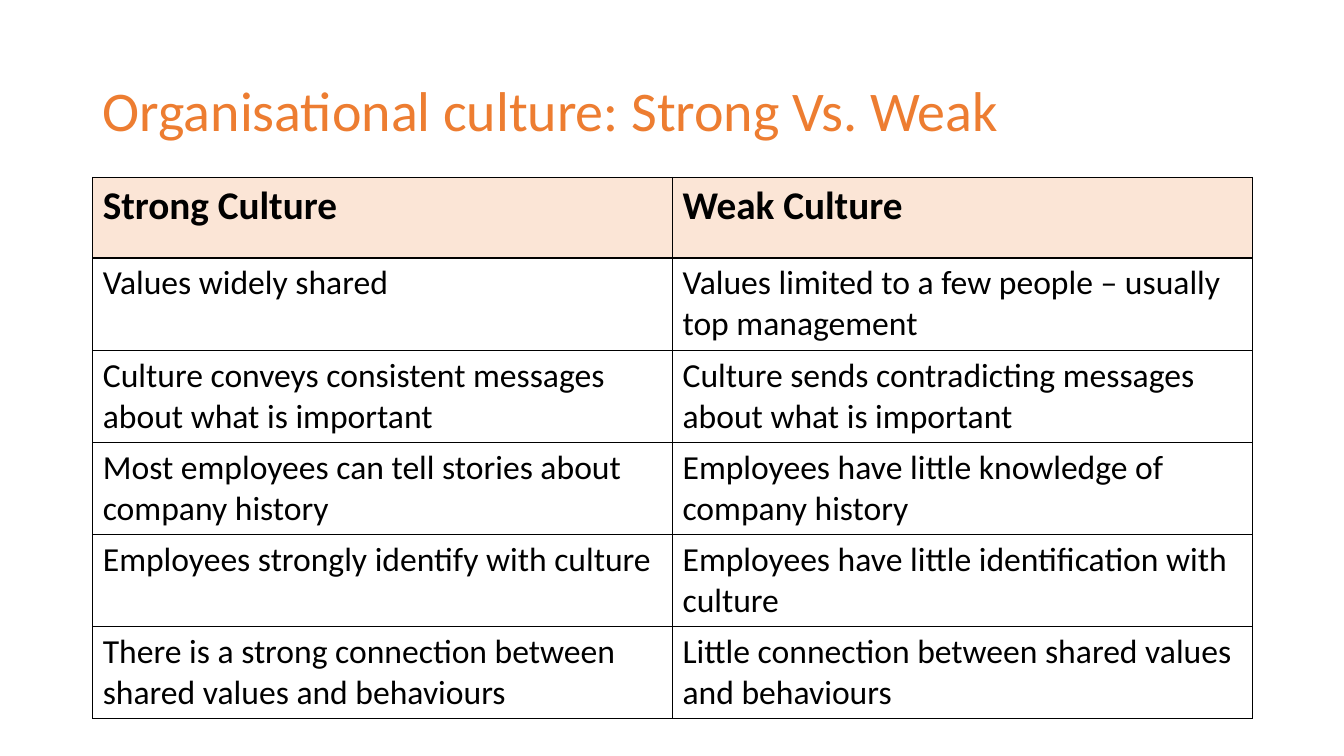
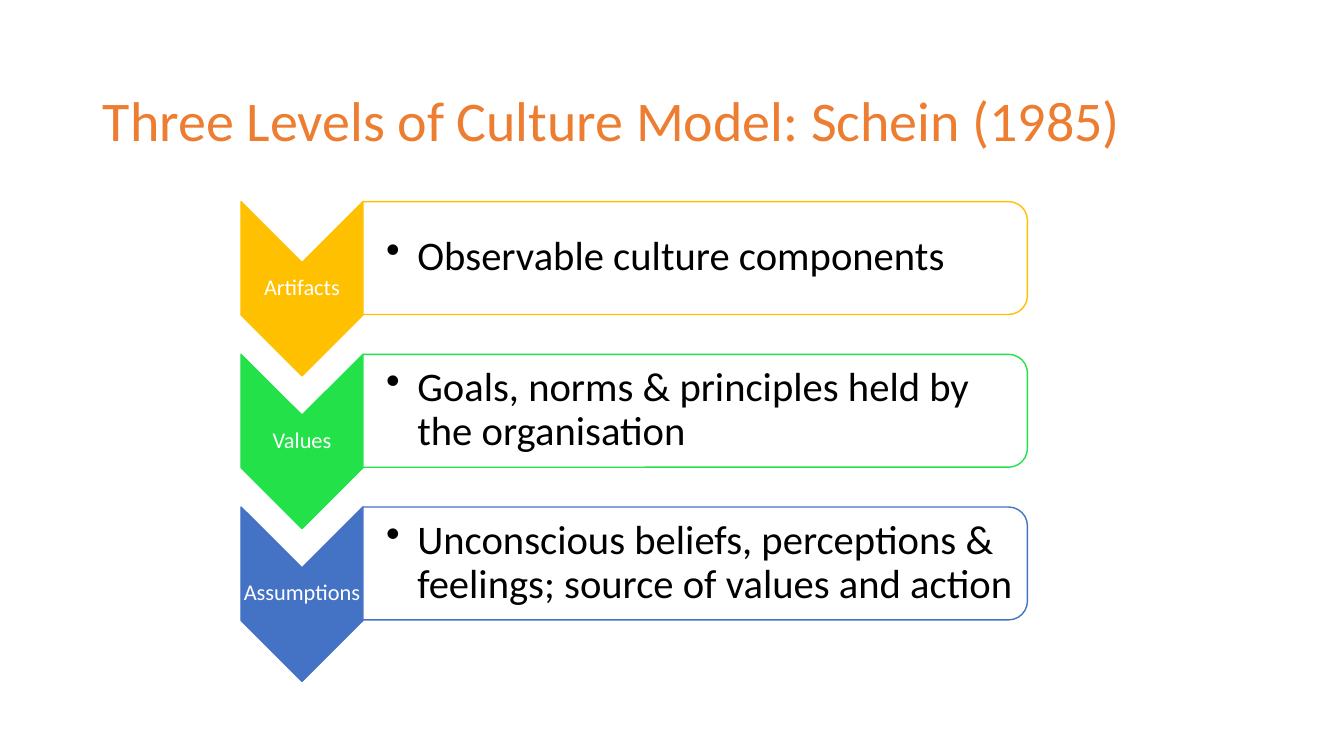
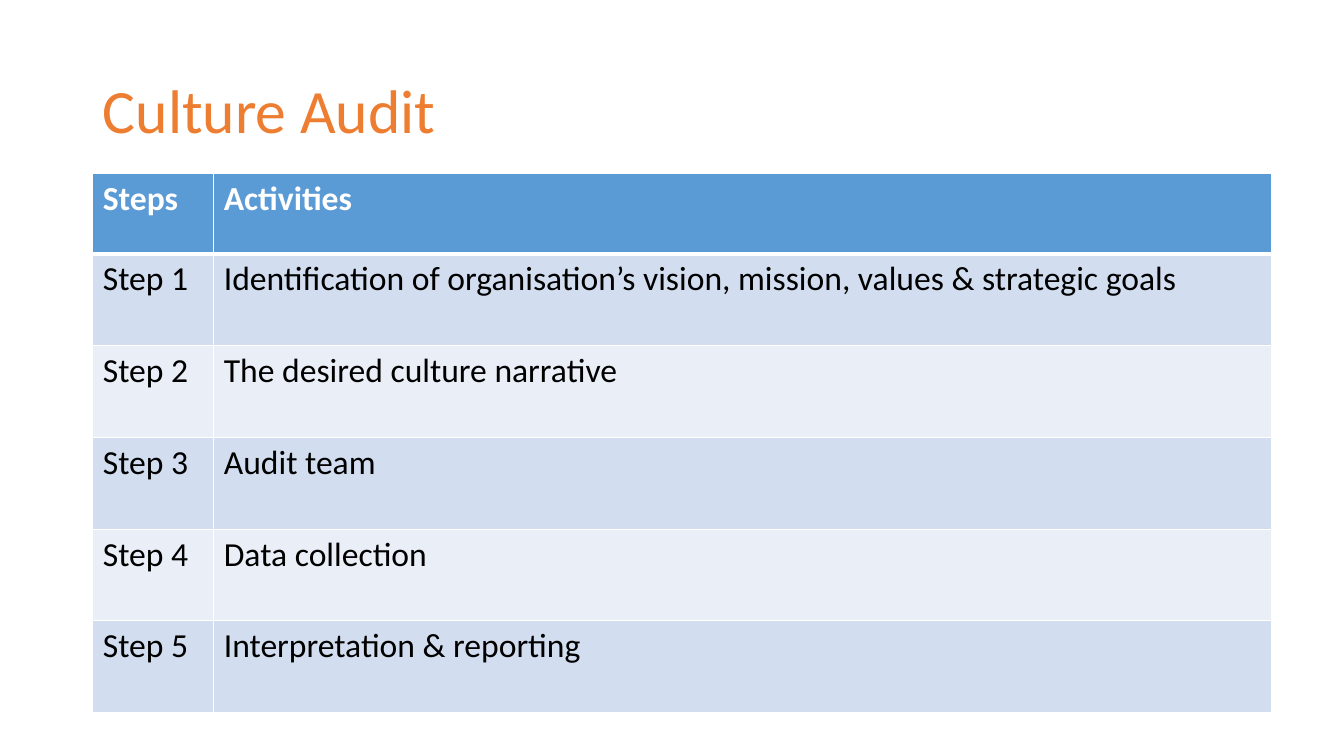
from lxml.etree import SubElement
from pptx import Presentation
from pptx.dml.color import RGBColor
from pptx.enum.shapes import MSO_SHAPE as Shape
from pptx.enum.text import MSO_ANCHOR as Anchor, MSO_AUTO_SIZE as AutoSize, PP_ALIGN as Align
from pptx.oxml.ns import qn
from pptx.util import Inches, Pt

FONT = "Calibri"
ORANGE, PEACH = "ED7D31", "FBE5D6"
BLUE, BAND_DARK, BAND_LIGHT = "5B9BD5", "D2DEEF", "EAEFF7"
BLACK, WHITE = "000000", "FFFFFF"
MARGIN = 0.92
HEADER_HEIGHT, ROW_HEIGHT = 0.8, 0.91

CULTURES = [
    ("Strong Culture", "Weak Culture"),
    ("Values widely shared", "Values limited to a few people – usually top management"),
    ("Culture conveys consistent messages about what is important",
     "Culture sends contradicting messages about what is important"),
    ("Most employees can tell stories about company history",
     "Employees have little knowledge of company history"),
    ("Employees strongly identify with culture",
     "Employees have little identification with culture"),
    ("There is a strong connection between shared values and behaviours",
     "Little connection between shared values and behaviours"),
]
LEVELS = [
    ("Artifacts", "Observable culture components", "FFC000"),
    ("Values", "Goals, norms & principles held by the organisation", "23E148"),
    ("Assumptions", "Unconscious beliefs, perceptions & feelings; source of values and action",
     "4472C4"),
]
ACTIVITIES = [
    "Identification of organisation’s vision, mission, values & strategic goals",
    "The desired culture narrative",
    "Audit team",
    "Data collection",
    "Interpretation & reporting",
]


def color(hex_string):
    return RGBColor.from_string(hex_string)


def style(paragraph, size, text_color, bold=False, align=Align.LEFT):
    font = paragraph.font
    font.name, font.size, font.bold = FONT, Pt(size), bold
    font.color.rgb = color(text_color)
    paragraph.alignment = align


def add_titled_slide(presentation, text, top=0.4, size=40):
    slide = presentation.slides.add_slide(presentation.slide_layouts[5])
    title = slide.shapes.title
    title.left, title.top = Inches(MARGIN), Inches(top)
    title.width, title.height = Inches(11.5), Inches(1.45)
    frame = title.text_frame
    frame.text = text
    frame.auto_size = AutoSize.NONE
    frame.vertical_anchor = Anchor.MIDDLE
    frame.paragraphs[0].line_spacing = 0.9
    style(frame.paragraphs[0], size, ORANGE)
    return slide


def set_borders(cell, line_color, top=1, bottom=1):
    properties = cell._tc.get_or_add_tcPr()
    for side, width in (("L", 1), ("R", 1), ("T", top), ("B", bottom)):
        line = SubElement(properties, qn(f"a:ln{side}"), w=str(Pt(width)))
        fill = SubElement(line, qn("a:solidFill"))
        SubElement(fill, qn("a:srgbClr"), val=line_color)


def add_grid(slide, top, widths, rows, header_fill, header_color, header_size,
             line_color, header_line=1, bands=()):
    """Add a table with a header row and, if given, alternating body fills."""
    height = HEADER_HEIGHT + ROW_HEIGHT * (len(rows) - 1)
    table = slide.shapes.add_table(len(rows), len(widths), Inches(MARGIN), Inches(top),
                                   Inches(sum(widths)), Inches(height)).table
    table.horz_banding = False
    for column, width in zip(table.columns, widths):
        column.width = Inches(width)
    for row_index, texts in enumerate(rows):
        is_header = row_index == 0
        table.rows[row_index].height = Inches(HEADER_HEIGHT if is_header else ROW_HEIGHT)
        band = bands[(row_index - 1) % len(bands)] if bands else None
        fill = header_fill if is_header else band
        for column_index, text in enumerate(texts):
            cell = table.cell(row_index, column_index)
            cell.text = text
            style(cell.text_frame.paragraphs[0], header_size if is_header else 24,
                  header_color if is_header else BLACK, bold=is_header)
            set_borders(cell, line_color, top=header_line if row_index == 1 else 1,
                        bottom=header_line if is_header else 1)
            if fill:
                cell.fill.solid()
                cell.fill.fore_color.rgb = color(fill)
            else:
                cell.fill.background()


def add_turned_shape(slide, kind, left, top, width, height, fill, line):
    """Add a shape turned by 90 degrees that covers the given box once turned."""
    shift = (width - height) / 2
    shape = slide.shapes.add_shape(kind, Inches(left + shift), Inches(top - shift),
                                   Inches(height), Inches(width))
    shape.rotation = 90
    shape.shadow.inherit = False
    shape.fill.solid()
    shape.fill.fore_color.rgb = color(fill)
    shape.line.color.rgb = color(line)
    shape.line.width = Pt(1)


def add_text(slide, left, top, width, height, text, size, text_color,
             align=Align.LEFT, inset=0.01, left_inset=0.01):
    frame = slide.shapes.add_textbox(Inches(left), Inches(top),
                                     Inches(width), Inches(height)).text_frame
    frame.word_wrap = True
    frame.vertical_anchor = Anchor.MIDDLE
    frame.margin_top = frame.margin_right = frame.margin_bottom = Inches(inset)
    frame.margin_left = Inches(left_inset)
    frame.text = text
    paragraph = frame.paragraphs[0]
    paragraph.line_spacing = 0.9
    style(paragraph, size, text_color, align=align)
    return paragraph


def add_bullet(paragraph, indent):
    properties = paragraph._p.get_or_add_pPr()
    properties.set("marL", str(Inches(indent)))
    properties.set("indent", str(-Inches(indent)))
    bullet = properties.makeelement(qn("a:buChar"), {"char": "•"})
    properties.insert_element_before(bullet, "a:tabLst", "a:defRPr", "a:extLst")


def add_level(slide, top, name, description, level_color):
    """Add one chevron with its label and the description card beside it."""
    chevron_left, chevron_width, card_left = 2.39, 1.21, 3.6
    add_turned_shape(slide, Shape.CHEVRON, chevron_left, top, chevron_width, 1.73,
                     level_color, level_color)
    add_text(slide, chevron_left, top + 0.6, chevron_width, 0.52, name, 16, WHITE, Align.CENTER)
    add_turned_shape(slide, Shape.ROUND_2_SAME_RECTANGLE, card_left, top, 6.59, 1.12,
                     WHITE, level_color)
    paragraph = add_text(slide, card_left, top + 0.05, 6.54, 1.01, description, 29, BLACK,
                         inset=0.02, left_inset=0.23)
    add_bullet(paragraph, 0.31)


def main():
    presentation = Presentation()
    presentation.slide_width, presentation.slide_height = Inches(13.33), Inches(7.5)

    slide = add_titled_slide(presentation, "Organisational culture: Strong Vs. Weak")
    add_grid(slide, 1.76, (5.75, 5.75), CULTURES, PEACH, BLACK, 28, BLACK)

    slide = add_titled_slide(presentation, "Three Levels of Culture Model: Schein (1985)", top=0.5)
    first_top, last_top = 2, 5.03
    pitch = (last_top - first_top) / (len(LEVELS) - 1)
    for index, level in enumerate(LEVELS):
        add_level(slide, first_top + index * pitch, *level)

    slide = add_titled_slide(presentation, "Culture Audit", size=44)
    steps = [(f"Step {number}", text) for number, text in enumerate(ACTIVITIES, 1)]
    add_grid(slide, 1.72, (1.2, 10.49), [("Steps", "Activities"), *steps], BLUE, WHITE, 24,
             WHITE, header_line=3, bands=(BAND_DARK, BAND_LIGHT))

    presentation.save("out.pptx")


if __name__ == "__main__":
    main()
